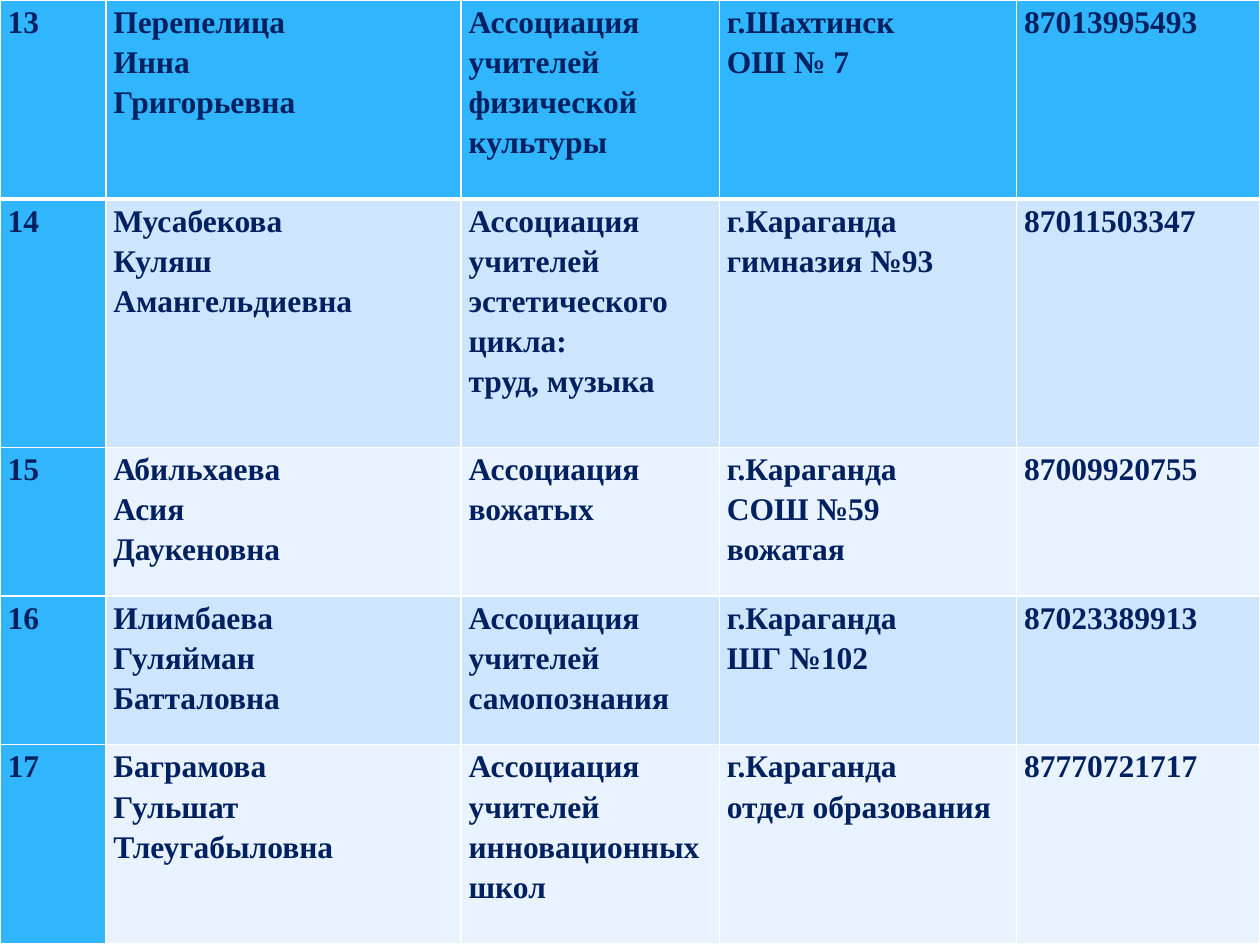
from dataclasses import dataclass

from lxml import etree
from pptx import Presentation
from pptx.dml.color import RGBColor
from pptx.oxml.ns import qn
from pptx.util import Inches, Pt

# Content: number, name, association, workplace, phone
ROWS = [
    ("13", "Перепелица\nИнна\nГригорьевна",
     "Ассоциация\nучителей\nфизической\nкультуры",
     "г.Шахтинск\nОШ № 7", "87013995493"),
    ("14", "Мусабекова\nКуляш\nАмангельдиевна",
     "Ассоциация\nучителей\nэстетического\nцикла:\nтруд, музыка",
     "г.Караганда\nгимназия №93", "87011503347"),
    ("15", "Абильхаева\nАсия\nДаукеновна",
     "Ассоциация\nвожатых",
     "г.Караганда\nСОШ №59\nвожатая", "87009920755"),
    ("16", "Илимбаева\nГуляйман\nБатталовна",
     "Ассоциация\nучителей\nсамопознания",
     "г.Караганда\nШГ №102", "87023389913"),
    ("17", "Баграмова\nГульшат Тлеугабыловна",
     "Ассоциация\nучителей\nинновационных\nшкол",
     "г.Караганда\nотдел образования", "87770721717"),
]
WIDTHS = [0.84, 2.82, 2.05, 2.36, 1.93]
HEIGHTS = [1.58, 1.97, 1.18, 1.18, 1.58]


@dataclass(frozen=True)
class Theme:
    font: str = "Times New Roman"
    size: int = 18
    lead: float = 1.15
    inset: float = 0.06
    ink: str = "002060"
    head: str = "31B6FD"
    bands: tuple = ("E8F3FF", "CEE5FE")
    rule: str = "FFFFFF"
    thin: int = 1
    thick: int = 3


THEME = Theme()


def set_edges(cell, row):
    """Draw white rules, with a thick one under the first row."""
    props = cell._tc.get_or_add_tcPr()
    widths = {"L": THEME.thin, "R": THEME.thin,
              "T": THEME.thick if row == 1 else THEME.thin,
              "B": THEME.thick if row == 0 else THEME.thin}
    for spot, (side, width) in enumerate(widths.items()):
        line = etree.Element(qn(f"a:ln{side}"), w=str(Pt(width)))
        fill = etree.SubElement(line, qn("a:solidFill"))
        etree.SubElement(fill, qn("a:srgbClr"), val=THEME.rule)
        props.insert(spot, line)


def fill_cell(cell, text, row, col):
    cell.margin_left = cell.margin_right = Inches(THEME.inset)
    cell.margin_top = cell.margin_bottom = 0
    is_head = row == 0 or col == 0
    tint = THEME.head if is_head else THEME.bands[row % 2]
    cell.fill.solid()
    cell.fill.fore_color.rgb = RGBColor.from_string(tint)
    set_edges(cell, row)
    cell.text_frame.text = text
    for para in cell.text_frame.paragraphs:
        para.line_spacing = THEME.lead
        font = para.font
        font.name, font.size, font.bold = THEME.font, Pt(THEME.size), True
        font.color.rgb = RGBColor.from_string(THEME.ink)


def main():
    deck = Presentation()
    deck.slide_width, deck.slide_height = Inches(10), Inches(7.5)
    slide = deck.slides.add_slide(deck.slide_layouts[6])

    # Contact table over the whole slide
    table = slide.shapes.add_table(
        len(ROWS), len(WIDTHS), 0, 0,
        deck.slide_width, deck.slide_height).table
    for col, width in zip(table.columns, WIDTHS):
        col.width = Inches(width)
    for row, height in zip(table.rows, HEIGHTS):
        row.height = Inches(height)
    for r, record in enumerate(ROWS):
        for c, text in enumerate(record):
            fill_cell(table.cell(r, c), text, r, c)

    deck.save("out.pptx")


if __name__ == "__main__":
    main()
